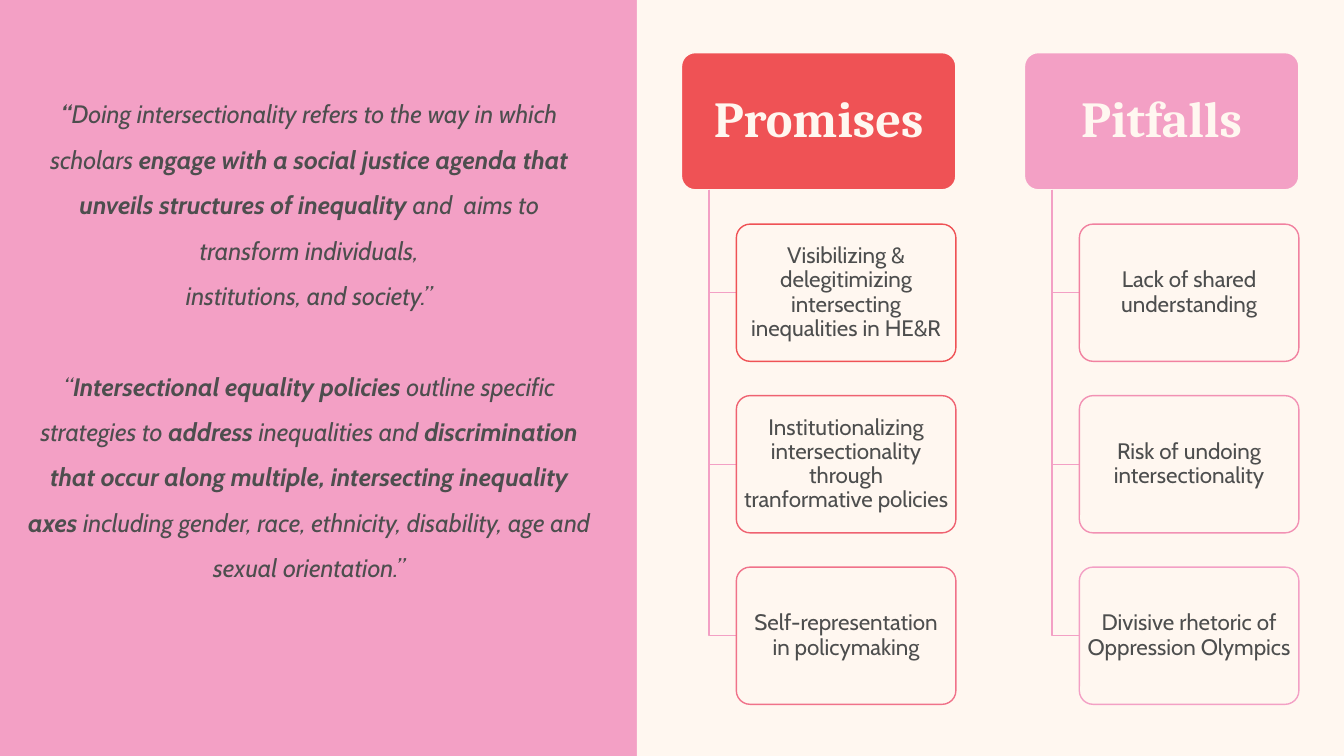
from dataclasses import dataclass

import pptx
import pptx.dml.color
import pptx.enum.shapes
import pptx.enum.text
import pptx.util

Pt = pptx.util.Pt
CENTER = pptx.enum.text.PP_ALIGN.CENTER
MIDDLE = pptx.enum.text.MSO_ANCHOR.MIDDLE
SHAPE = pptx.enum.shapes.MSO_SHAPE

PINK, RED, CREAM, GRAY = "F3A0C5", "EF5255", "FFF7F0", "4D4E4E"

# Column geometry, in points
PANEL_LEFT = 455
HEADER_LEFT, HEADER_TOP = 486.8, 37.6
CARD_WIDTH, CARD_HEIGHT = 196, 98
COLUMN_STEP, ROW_STEP = CARD_WIDTH * 1.25, CARD_HEIGHT * 1.25
RAIL_OFFSET, ITEM_OFFSET = CARD_WIDTH * 0.1, CARD_WIDTH * 0.2


@dataclass
class Span:
    text: str
    bold: bool = False


@dataclass
class Item:
    text: str
    border: str


@dataclass
class Column:
    title: str
    fill: str
    items: list[Item]


@dataclass
class Card:
    text: str
    left: float
    top: float
    width: float
    fill: str
    border: str
    font: str
    size: float
    color: str
    bold: bool
    margin: float


LINE_BREAK = Span("\n")
QUOTES = [
    [
        Span("“", True),
        Span("Doing intersectionality refers to the way in which scholars "),
        Span("engage with a social justice agenda that unveils structures of inequality", True),
        Span(" and  aims to transform individuals,"),
        LINE_BREAK,
        Span("institutions, and society.”"),
    ],
    [
        Span("“"),
        Span("Intersectional equality policies ", True),
        Span("outline specific strategies to "),
        Span("address", True),
        Span(" inequalities and "),
        Span("discrimination that occur along multiple, intersecting inequality axes", True),
        Span(" including gender, race, ethnicity, disability, age and sexual orientation.”"),
    ],
]
COLUMNS = [
    Column("Promises", RED, [
        Item("Visibilizing & delegitimizing intersecting inequalities in HE&R", "EF5255"),
        Item("Institutionalizing intersectionality through tranformative policies", "EF6271"),
        Item("Self-representation in policymaking", "F0728A"),
    ]),
    Column("Pitfalls", PINK, [
        Item("Lack of shared understanding", "F181A0"),
        Item("Risk of undoing intersectionality", "F291B4"),
        Item("Divisive rhetoric of Oppression Olympics", "F3A0C5"),
    ]),
]


def rgb(value: str) -> pptx.dml.color.RGBColor:
    return pptx.dml.color.RGBColor.from_string(value)


def style_font(font, name: str, size: float, color: str, bold: bool) -> None:
    font.name = name
    font.size = Pt(size)
    font.bold = bold
    font.color.rgb = rgb(color)


def add_quotes(page) -> None:
    box = page.shapes.add_textbox(Pt(7.9), Pt(56.2), Pt(421.5), Pt(396))
    frame = box.text_frame
    frame.word_wrap = True
    frame.margin_left = Pt(11.5)
    for index, spans in enumerate(QUOTES):
        para = frame.add_paragraph() if index else frame.paragraphs[0]
        para.alignment = CENTER
        para.line_spacing = 1.5
        if index:
            para.space_before = Pt(32.4)
        for span in spans:
            if span is LINE_BREAK:
                para.add_line_break()
                continue
            run = para.add_run()
            run.text = span.text
            style_font(run.font, "Cabin", 18, GRAY, span.bold)
            run.font.italic = True


def add_card(page, card: Card) -> None:
    box = page.shapes.add_shape(
        SHAPE.ROUNDED_RECTANGLE,
        Pt(card.left), Pt(card.top), Pt(card.width), Pt(CARD_HEIGHT))
    box.adjustments[0] = 0.1
    box.shadow.inherit = False
    box.fill.solid()
    box.fill.fore_color.rgb = rgb(card.fill)
    box.line.color.rgb = rgb(card.border)
    box.line.width = Pt(1)
    frame = box.text_frame
    frame.word_wrap = True
    frame.vertical_anchor = MIDDLE
    frame.margin_left = frame.margin_right = Pt(card.margin)
    frame.margin_top = frame.margin_bottom = Pt(card.margin * 0.7)
    frame.text = card.text
    para = frame.paragraphs[0]
    para.alignment = CENTER
    para.line_spacing = 0.9
    style_font(para.runs[0].font, card.font, card.size, card.color, card.bold)


def add_elbow(page, left: float, top: float, right: float, bottom: float) -> None:
    builder = page.shapes.build_freeform(Pt(left), Pt(top))
    builder.add_line_segments(
        [(Pt(left), Pt(bottom)), (Pt(right), Pt(bottom))], close=False)
    elbow = builder.convert_to_shape()
    elbow.shadow.inherit = False
    elbow.fill.background()
    elbow.line.color.rgb = rgb(PINK)
    elbow.line.width = Pt(1)


def add_column(page, column: Column, left: float) -> None:
    add_card(page, Card(column.title, left, HEADER_TOP, CARD_WIDTH, column.fill,
                        CREAM, "Cambria", 36, CREAM, True, 5))
    item_left = left + ITEM_OFFSET
    for row, item in enumerate(column.items, start=1):
        top = HEADER_TOP + row * ROW_STEP
        add_elbow(page, left + RAIL_OFFSET, HEADER_TOP + CARD_HEIGHT,
                  item_left, top + CARD_HEIGHT / 2)
        add_card(page, Card(item.text, item_left, top, CARD_WIDTH - ITEM_OFFSET, CREAM,
                            item.border, "Cabin", 16, GRAY, False, 2.2))


def main() -> None:
    deck = pptx.Presentation()
    deck.slide_width, deck.slide_height = Pt(960), Pt(540)
    page = deck.slides.add_slide(deck.slide_layouts[6])
    page.background.fill.solid()
    page.background.fill.fore_color.rgb = rgb(PINK)

    # Quotations on the left
    add_quotes(page)

    # Light panel on the right
    panel = page.shapes.add_shape(
        SHAPE.RECTANGLE, Pt(PANEL_LEFT), 0, Pt(960 - PANEL_LEFT), Pt(540))
    panel.shadow.inherit = False
    panel.fill.solid()
    panel.fill.fore_color.rgb = rgb(CREAM)
    panel.line.fill.background()

    # Promises and pitfalls
    for index, column in enumerate(COLUMNS):
        add_column(page, column, HEADER_LEFT + index * COLUMN_STEP)

    deck.save("out.pptx")


if __name__ == "__main__":
    main()
